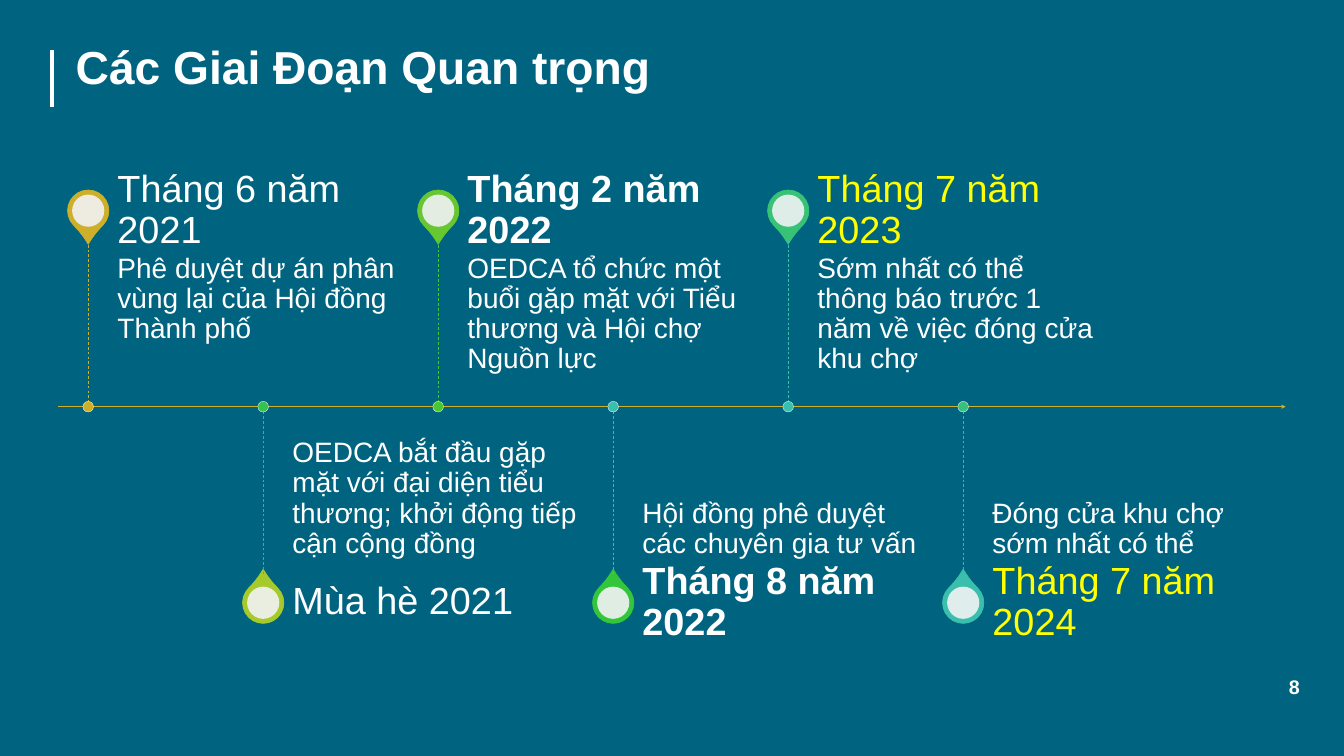
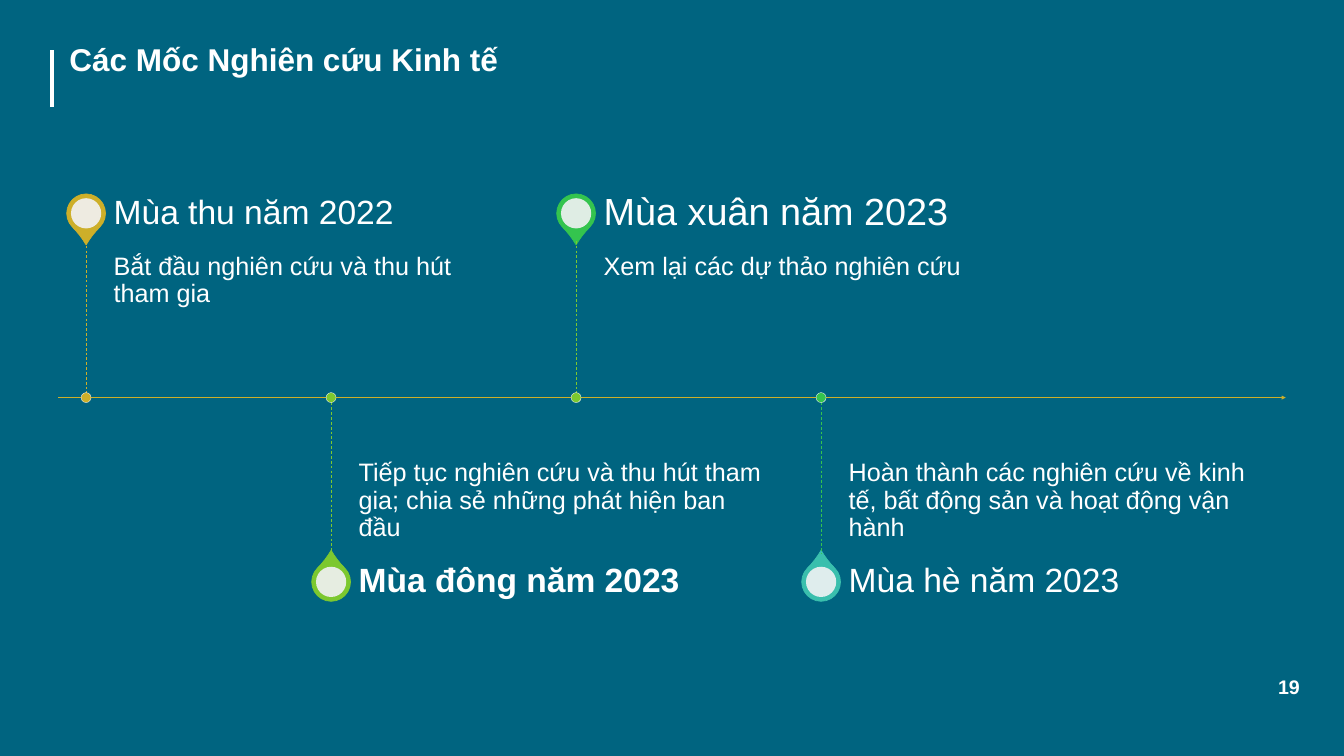
from dataclasses import dataclass
from typing import Optional

from lxml.etree import SubElement
from pptx import Presentation
from pptx.dml.color import RGBColor
from pptx.enum.dml import MSO_LINE
from pptx.enum.shapes import MSO_CONNECTOR, MSO_SHAPE
from pptx.enum.text import MSO_ANCHOR, MSO_AUTO_SIZE, PP_ALIGN
from pptx.oxml.ns import qn
from pptx.util import Pt


@dataclass(frozen=True)
class Theme:
    font: str = "Arial"
    background: str = "006480"
    text: str = "FFFFFF"
    highlight: str = "FFFF00"
    axis: str = "CDAF29"
    hub: str = "F2F2F5"
    hub_opacity: int = 90
    page_number_size: float = 28
    line_spacing: float = 0.9


THEME = Theme()


@dataclass(frozen=True)
class Style:
    size: float
    color: str = THEME.text
    bold: bool = False
    align: PP_ALIGN = PP_ALIGN.LEFT
    line_spacing: float = THEME.line_spacing


@dataclass(frozen=True)
class Box:
    left: float
    top: float
    width: float
    height: float


@dataclass(frozen=True)
class Insets:
    left: float = 7.2
    top: float = 3.6
    right: float = 7.2
    bottom: float = 3.6


@dataclass(frozen=True)
class Milestone:
    date: str
    detail: str
    pin: str
    spine: str
    bold: bool = False
    color: str = THEME.text
    date_size: Optional[float] = None


@dataclass(frozen=True)
class Timeline:
    title: str
    title_left: float
    title_size: float
    title_height: float
    page_number: str
    axis_y: float
    first_x: float
    step: float
    scale: float
    label_width: float
    date_size: float
    detail_size: float
    milestones: tuple[Milestone, ...]


# Drawing helpers
def add_text(page, text: str, box: Box, style: Style, insets: Insets = Insets(),
             anchor: MSO_ANCHOR = MSO_ANCHOR.TOP, grow: bool = False) -> None:
    shape = page.shapes.add_textbox(Pt(box.left), Pt(box.top), Pt(box.width), Pt(box.height))
    frame = shape.text_frame
    frame.word_wrap = True
    frame.auto_size = MSO_AUTO_SIZE.SHAPE_TO_FIT_TEXT if grow else MSO_AUTO_SIZE.NONE
    frame.vertical_anchor = anchor
    frame.margin_left, frame.margin_top = Pt(insets.left), Pt(insets.top)
    frame.margin_right, frame.margin_bottom = Pt(insets.right), Pt(insets.bottom)
    para = frame.paragraphs[0]
    para.text = text
    para.alignment = style.align
    para.line_spacing = style.line_spacing
    para.font.name = THEME.font
    para.font.size = Pt(style.size)
    para.font.bold = style.bold
    para.font.color.rgb = RGBColor.from_string(style.color)


def add_line(page, start: tuple[float, float], end: tuple[float, float], color: str,
             width: float, dashed: bool = False, arrow: bool = False) -> None:
    connector = page.shapes.add_connector(
        MSO_CONNECTOR.STRAIGHT, Pt(start[0]), Pt(start[1]), Pt(end[0]), Pt(end[1]))
    connector.line.color.rgb = RGBColor.from_string(color)
    connector.line.width = Pt(width)
    if dashed:
        connector.line.dash_style = MSO_LINE.DASH
    properties = connector._element.spPr
    if arrow:
        SubElement(properties.find(qn("a:ln")), qn("a:tailEnd"), type="triangle")
    SubElement(properties, qn("a:effectLst"))


def add_round(page, kind: MSO_SHAPE, x: float, y: float, size: float, fill: str,
              line: Optional[str] = None, line_width: float = 1):
    """Place a square-framed shape by its centre."""
    shape = page.shapes.add_shape(
        kind, Pt(x - size / 2), Pt(y - size / 2), Pt(size), Pt(size))
    shape.shadow.inherit = False
    shape.fill.solid()
    shape.fill.fore_color.rgb = RGBColor.from_string(fill)
    if line:
        shape.line.color.rgb = RGBColor.from_string(line)
        shape.line.width = Pt(line_width)
    else:
        shape.line.fill.background()
    return shape


# Shared slide frame
def add_frame(page, timeline: Timeline) -> None:
    page.background.fill.solid()
    page.background.fill.fore_color.rgb = RGBColor.from_string(THEME.background)
    add_line(page, (74, 72), (74, 153), THEME.text, 5)
    add_text(page, timeline.title,
             Box(timeline.title_left, 60, 1824.5 - timeline.title_left, timeline.title_height),
             Style(timeline.title_size, bold=True), grow=True)
    add_text(page, timeline.page_number, Box(1682, 960, 182, 41),
             Style(THEME.page_number_size, bold=True, align=PP_ALIGN.RIGHT, line_spacing=1),
             grow=True)


# One milestone, above or below the axis
def add_milestone(page, timeline: Timeline, index: int, milestone: Milestone) -> None:
    above = index % 2 == 0
    side = -1 if above else 1
    x = timeline.first_x + index * timeline.step
    axis_y = timeline.axis_y
    spine = 238.3 * timeline.scale
    date_height = 83.5 * timeline.scale
    spine_end = axis_y + side * spine
    pin_y = spine_end + side * date_height / 2

    pin = add_round(page, MSO_SHAPE.TEAR, x, pin_y, 59 * timeline.scale,
                    milestone.pin, milestone.pin)
    pin.adjustments[0] = 1.15
    pin.rotation = 135 if above else 315
    hub = add_round(page, MSO_SHAPE.OVAL, x, pin_y, 46 * timeline.scale, THEME.hub)
    hub_color = hub._element.spPr.find(qn("a:solidFill")).find(qn("a:srgbClr"))
    SubElement(hub_color, qn("a:alpha"), val=str(THEME.hub_opacity * 1000))

    left = x + 41.8 * timeline.scale
    size = timeline.detail_size
    near_pin, near_axis = size / 2, size * 0.75
    insets = (Insets(0, near_pin, near_pin, near_axis) if above
              else Insets(0, near_axis, 0, near_pin))
    add_text(page, milestone.detail,
             Box(left, min(axis_y, spine_end), timeline.label_width, spine),
             Style(size), insets, MSO_ANCHOR.TOP if above else MSO_ANCHOR.BOTTOM)
    date_size = milestone.date_size or timeline.date_size
    add_text(page, milestone.date,
             Box(left, pin_y - date_height / 2, timeline.label_width, date_height),
             Style(date_size, milestone.color, milestone.bold),
             Insets(0, 0, date_size / 2, 0), MSO_ANCHOR.MIDDLE)

    add_line(page, (x, min(axis_y, spine_end)), (x, max(axis_y, spine_end)),
             milestone.spine, 1, dashed=True)
    add_round(page, MSO_SHAPE.OVAL, x, axis_y, 15.2 * timeline.scale,
              milestone.spine, THEME.hub, 0.5)


def add_timeline(deck, timeline: Timeline) -> None:
    page = deck.slides.add_slide(deck.slide_layouts[6])
    add_frame(page, timeline)
    add_line(page, (83.5, timeline.axis_y), (1836.7, timeline.axis_y),
             THEME.axis, 1.5, arrow=True)
    for index, milestone in enumerate(timeline.milestones):
        add_milestone(page, timeline, index, milestone)


# Content
KEY_PHASES = Timeline(
    title="Các Giai Đoạn Quan trọng", title_left=101, title_size=66, title_height=80,
    page_number="8", axis_y=581, first_x=126, step=250, scale=1,
    label_width=417, date_size=54, detail_size=40,
    milestones=(
        Milestone("Tháng 6 năm 2021",
                  "Phê duyệt dự án phân vùng lại của Hội đồng Thành phố",
                  "CDAF29", "CDAF29"),
        Milestone("Mùa hè 2021",
                  "OEDCA bắt đầu gặp mặt với đại diện tiểu thương; "
                  "khởi động tiếp cận cộng đồng",
                  "A6CA2C", "34C44E"),
        Milestone("Tháng 2 năm 2022",
                  "OEDCA tổ chức một buổi gặp mặt với Tiểu thương và Hội chợ Nguồn lực",
                  "67C730", "49C631", bold=True),
        Milestone("Tháng 8 năm 2022",
                  "Hội đồng phê duyệt các chuyên gia tư vấn",
                  "33C53A", "3ABFAD", bold=True),
        Milestone("Tháng 7 năm 2023",
                  "Sớm nhất có thể thông báo trước 1 năm về việc đóng cửa khu chợ",
                  "37C276", "3ABFAD", color=THEME.highlight),
        Milestone("Tháng 7 năm 2024",
                  "Đóng cửa khu chợ sớm nhất có thể",
                  "3ABFAD", "37C17F", color=THEME.highlight),
    ),
)

STUDY_MILESTONES = Timeline(
    title="Các Mốc Nghiên cứu Kinh tế", title_left=92, title_size=45, title_height=56,
    page_number="19", axis_y=568, first_x=123, step=350, scale=0.94,
    label_width=583, date_size=48, detail_size=36,
    milestones=(
        Milestone("Mùa thu năm 2022",
                  "Bắt đầu nghiên cứu và thu hút tham gia",
                  "CDAF29", "CDAF29"),
        Milestone("Mùa đông năm 2023",
                  "Tiếp tục nghiên cứu và thu hút tham gia; "
                  "chia sẻ những phát hiện ban đầu",
                  "7CC82F", "7CC82F", bold=True),
        Milestone("Mùa xuân năm 2023",
                  "Xem lại các dự thảo nghiên cứu",
                  "34C44E", "7CC82F", date_size=54),
        Milestone("Mùa hè năm 2023",
                  "Hoàn thành các nghiên cứu về kinh tế, "
                  "bất động sản và hoạt động vận hành",
                  "3ABFAD", "34C44E"),
    ),
)


def main() -> None:
    deck = Presentation()
    deck.slide_width, deck.slide_height = Pt(1920), Pt(1080)
    for timeline in (KEY_PHASES, STUDY_MILESTONES):
        add_timeline(deck, timeline)
    deck.save("out.pptx")


if __name__ == "__main__":
    main()
